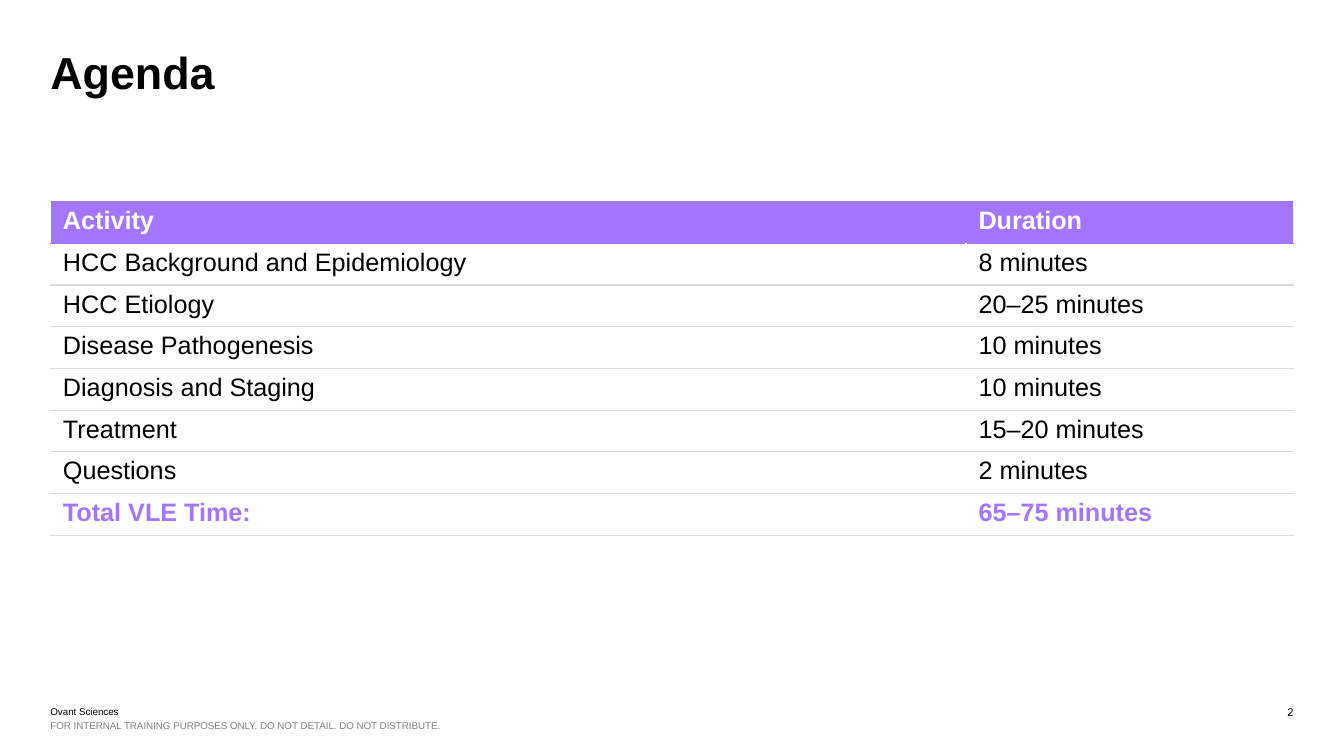
from dataclasses import dataclass

from lxml import etree
from pptx import Presentation
from pptx.dml.color import RGBColor
from pptx.enum.text import MSO_ANCHOR, PP_ALIGN
from pptx.oxml.ns import qn
from pptx.util import Pt

# Content
TITLE = "Agenda"
AGENDA = [
    ("Activity", "Duration"),
    ("HCC Background and Epidemiology", "8 minutes"),
    ("HCC Etiology", "20–25 minutes"),
    ("Disease Pathogenesis", "10 minutes"),
    ("Diagnosis and Staging", "10 minutes"),
    ("Treatment", "15–20 minutes"),
    ("Questions", "2 minutes"),
    ("Total VLE Time:", "65–75 minutes"),
]
COMPANY = "Ovant Sciences"
NOTICE = "FOR INTERNAL TRAINING PURPOSES ONLY. DO NOT DETAIL. DO NOT DISTRIBUTE."
PAGE_NUMBER = "2"

# Layout in px, 96 to the inch
EMU_PER_PX = 9525
SLIDE_WIDTH, SLIDE_HEIGHT = 1280, 720
MARGIN = 48
CONTENT_WIDTH = SLIDE_WIDTH - 2 * MARGIN
TITLE_BOX = (MARGIN, 48, CONTENT_WIDTH, 94)
TABLE_BOX = (MARGIN, 192, CONTENT_WIDTH, 318)
DURATION_WIDTH = 312
CELL_INSETS = (12, 5, 12, 5)
NO_INSETS = (0, 0, 0, 0)

LEFT, RIGHT = PP_ALIGN.LEFT, PP_ALIGN.RIGHT
TOP = MSO_ANCHOR.TOP


@dataclass(frozen=True)
class Theme:
    font: str = "Arial"
    text: str = "000000"
    muted: str = "808080"
    accent: str = "A475FF"
    white: str = "FFFFFF"
    rule: str = "D9D9D9"
    title_size: int = 32
    title_leading: int = 34
    table_size: int = 18
    footer_size: int = 7
    number_size: int = 8


THEME = Theme()

# Text, left, top, width, height, insets, size, colour, alignment
FOOTERS = [
    (COMPANY, (MARGIN, 672, 133, 12), NO_INSETS, THEME.footer_size, THEME.text, LEFT),
    (NOTICE, (38, 680, 640, 21), (10, 5, 10, 5), THEME.footer_size, THEME.muted, LEFT),
    (PAGE_NUMBER, (944, 672, 288, 38), NO_INSETS, THEME.number_size, THEME.text, RIGHT),
]


def px(length):
    return round(length * EMU_PER_PX)


def place(shape, box):
    shape.left, shape.top, shape.width, shape.height = map(px, box)


def set_insets(target, insets):
    (target.margin_left, target.margin_top,
     target.margin_right, target.margin_bottom) = map(px, insets)


def style(paragraph, size, color, bold=False, alignment=LEFT):
    paragraph.alignment = alignment
    font = paragraph.font
    font.name, font.size, font.bold = THEME.font, Pt(size), bold
    font.color.rgb = RGBColor.from_string(color)


def set_borders(cell, colors):
    """Draw 1 pt borders; colors are left, right, top, bottom."""
    properties = cell._tc.get_or_add_tcPr()
    for side, color in zip("LRTB", colors):
        line = etree.SubElement(properties, qn(f"a:ln{side}"), w=str(Pt(1)))
        fill = etree.SubElement(line, qn("a:solidFill"))
        etree.SubElement(fill, qn("a:srgbClr"), val=color)


def add_title(slide):
    title = slide.shapes.title
    place(title, TITLE_BOX)
    frame = title.text_frame
    frame.text = TITLE
    frame.vertical_anchor = TOP
    set_insets(frame, NO_INSETS)
    paragraph = frame.paragraphs[0]
    style(paragraph, THEME.title_size, THEME.text, bold=True)
    paragraph.line_spacing = Pt(THEME.title_leading)


def add_agenda(slide):
    table = slide.shapes.add_table(len(AGENDA), 2, *map(px, TABLE_BOX)).table
    table.horz_banding = False
    widths = (CONTENT_WIDTH - DURATION_WIDTH, DURATION_WIDTH)
    for column, width in zip(table.columns, widths):
        column.width = px(width)
    last = len(AGENDA) - 1
    for row_index, entries in enumerate(AGENDA):
        table.rows[row_index].height = px(TABLE_BOX[3] / len(AGENDA))
        header = row_index == 0
        color = THEME.white if header else THEME.accent if row_index == last else THEME.text
        above = THEME.accent if row_index <= 1 else THEME.rule
        below = THEME.accent if header else THEME.rule
        for column_index, entry in enumerate(entries):
            cell = table.cell(row_index, column_index)
            cell.text = entry
            set_insets(cell, CELL_INSETS)
            style(cell.text_frame.paragraphs[0], THEME.table_size, color,
                  bold=row_index in (0, last))
            # Inner vertical borders blend into the row
            row_fill = THEME.accent if header else THEME.white
            left = THEME.white if column_index == 0 else row_fill
            right = row_fill if column_index == 0 else THEME.white
            set_borders(cell, (left, right, above, below))
            if header:
                cell.fill.solid()
                cell.fill.fore_color.rgb = RGBColor.from_string(THEME.accent)
            else:
                cell.fill.background()


def add_footer(slide, text, box, insets, size, color, alignment):
    frame = slide.shapes.add_textbox(*map(px, box)).text_frame
    frame.word_wrap = True
    frame.text = text
    set_insets(frame, insets)
    style(frame.paragraphs[0], size, color, alignment=alignment)


def main():
    presentation = Presentation()
    presentation.slide_width = px(SLIDE_WIDTH)
    presentation.slide_height = px(SLIDE_HEIGHT)
    slide = presentation.slides.add_slide(presentation.slide_layouts[5])
    add_title(slide)
    add_agenda(slide)
    for footer in FOOTERS:
        add_footer(slide, *footer)
    presentation.save("out.pptx")


if __name__ == "__main__":
    main()
